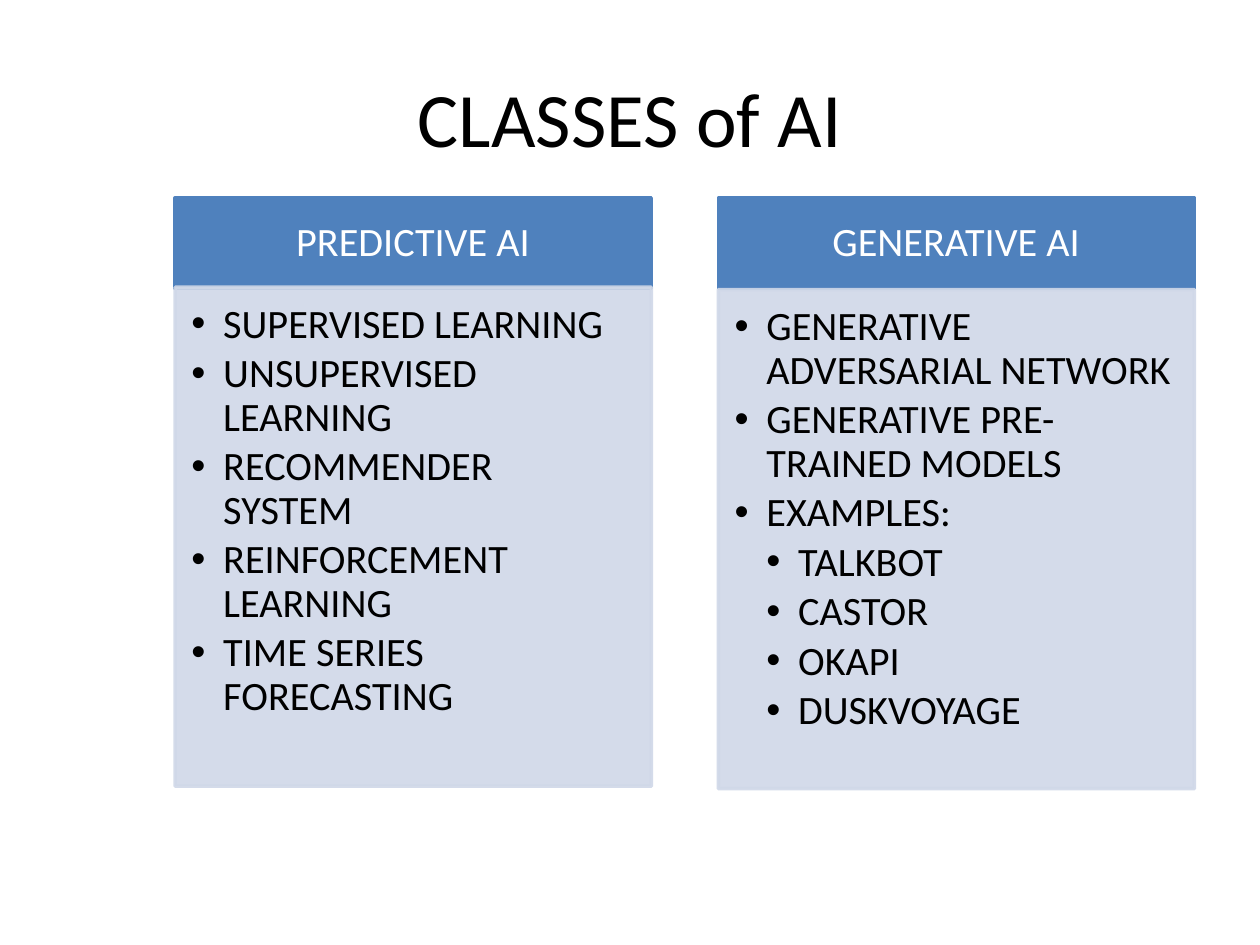
import lxml.etree
import pptx
import pptx.dml.color
import pptx.enum.text
import pptx.oxml.ns
import pptx.util

Cm = pptx.util.Cm
Pt = pptx.util.Pt
qn = pptx.oxml.ns.qn
ALIGN = pptx.enum.text.PP_ALIGN
ANCHOR = pptx.enum.text.MSO_ANCHOR

COLORS = {"header": "4F81BD", "panel": "D0D8E8", "light": "FFFFFF", "dark": "000000"}
FONT = "Calibri"
COLUMN_WIDTH = 9.6
COLUMN_TOP = 3.99
HEADER_HEIGHT = 1.83
LIST_HEIGHT = 10.06
INDENT = 0.64

CLASSES = [
    {
        "left": 3.53,
        "list_offset": 1.8,
        "heading": "PREDICTIVE AI",
        "entries": [
            ("SUPERVISED LEARNING", 0),
            ("UNSUPERVISED LEARNING", 0),
            ("RECOMMENDER SYSTEM", 0),
            ("REINFORCEMENT LEARNING", 0),
            ("TIME SERIES FORECASTING", 0),
        ],
    },
    {
        "left": 14.48,
        "list_offset": 1.85,
        "heading": "GENERATIVE AI",
        "entries": [
            ("GENERATIVE ADVERSARIAL NETWORK", 0),
            ("GENERATIVE PRE-TRAINED MODELS", 0),
            ("EXAMPLES:", 0),
            ("TALKBOT", 1),
            ("CASTOR", 1),
            ("OKAPI", 1),
            ("DUSKVOYAGE", 1),
        ],
    },
]


def rgb(name):
    return pptx.dml.color.RGBColor.from_string(COLORS[name])


def place(holder, left, top, width, height):
    holder.left, holder.top = Cm(left), Cm(top)
    holder.width, holder.height = Cm(width), Cm(height)


def paint(holder, color, opacity=100):
    holder.fill.solid()
    holder.line.fill.solid()
    holder.line.width = Pt(2)
    for paint_format in (holder.fill, holder.line.fill):
        paint_format.fore_color.rgb = rgb(color)
    if opacity < 100:
        for tint in holder._element.spPr.iter(qn("a:srgbClr")):
            lxml.etree.SubElement(tint, qn("a:alpha"), val=str(opacity * 1000))


def set_frame(frame, anchor, margins):
    frame.word_wrap = True
    frame.auto_size = pptx.enum.text.MSO_AUTO_SIZE.NONE
    frame.vertical_anchor = anchor
    (frame.margin_left, frame.margin_top,
     frame.margin_right, frame.margin_bottom) = map(Cm, margins)


def style_runs(paragraph, size, color):
    for run in paragraph.runs:
        run.font.name = FONT
        run.font.size = Pt(size)
        run.font.bold = False
        run.font.color.rgb = rgb(color)


def set_spacing(paragraph, after_percent):
    paragraph.line_spacing = 0.9
    paragraph.space_before = Pt(0)
    after = lxml.etree.SubElement(paragraph._p.get_or_add_pPr(), qn("a:spcAft"))
    lxml.etree.SubElement(after, qn("a:spcPct"), val=str(after_percent * 1000))


def add_title(title, left, top, width, height):
    place(title, left, top, width, height)
    title.text_frame.text = "CLASSES of AI"
    title.text_frame.vertical_anchor = ANCHOR.MIDDLE
    title.text_frame.paragraphs[0].alignment = ALIGN.CENTER
    style_runs(title.text_frame.paragraphs[0], 44, "dark")


def add_heading(heading, text, left, top, width, height):
    place(heading, left, top, width, height)
    paint(heading, "header")
    set_frame(heading.text_frame, ANCHOR.MIDDLE, (0.46, 0.26, 0.46, 0.26))
    heading.text_frame.text = text
    paragraph = heading.text_frame.paragraphs[0]
    paragraph.alignment = ALIGN.CENTER
    set_spacing(paragraph, 35)
    style_runs(paragraph, 23, "light")


def add_list(panel, entries, left, top, width, height):
    place(panel, left, top, width, height)
    paint(panel, "panel", 90)
    frame = panel.text_frame
    set_frame(frame, ANCHOR.TOP, (0.33, 0.33, 0.46, 0.5))
    frame.text = "\n".join(text for text, level in entries)
    for paragraph, (text, level) in zip(frame.paragraphs, entries):
        paragraph.level = level
        set_spacing(paragraph, 15)
        properties = paragraph._p.get_or_add_pPr()
        properties.set("marL", str(Cm(INDENT * (level + 1))))
        properties.set("indent", str(Cm(-INDENT)))
        lxml.etree.SubElement(properties, qn("a:buChar"), char="•")
        style_runs(paragraph, 23, "dark")


def add_class(heading, panel, content, left, top, width):
    add_heading(heading, content["heading"], left, top, width, HEADER_HEIGHT)
    add_list(panel, content["entries"], left, top + content["list_offset"],
             width, LIST_HEIGHT)


def main():
    deck = pptx.Presentation()
    deck.slide_width, deck.slide_height = Cm(25.4), Cm(19.05)
    slide = deck.slides.add_slide(deck.slide_layouts.get_by_name("Comparison"))
    title, *holders = list(slide.placeholders)
    add_title(title, 1.27, 0.76, 22.86, 3.18)
    for content, heading, panel in zip(CLASSES, holders[::2], holders[1::2]):
        add_class(heading, panel, content, content["left"], COLUMN_TOP, COLUMN_WIDTH)
    deck.save("out.pptx")


if __name__ == "__main__":
    main()
